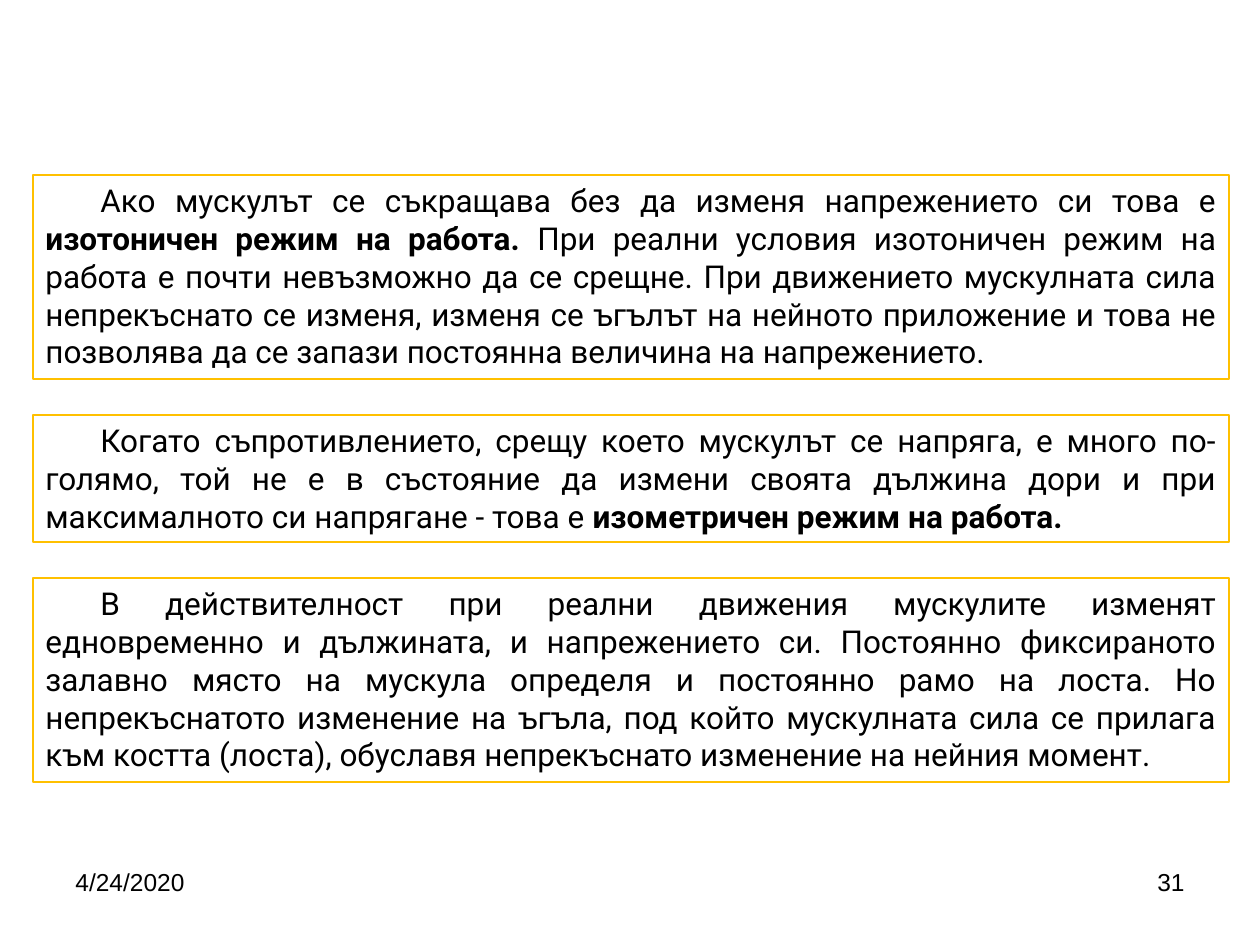
import pptx
import pptx.dml.color
import pptx.enum.shapes
import pptx.enum.text
import pptx.util

ALIGN = pptx.enum.text.PP_ALIGN
EMU_PER_PX = 914400 // 126

# Each panel: height, then its (text, bold) runs
PANELS = [
    (204, [
        ("Ако мускулът се съкращава без да изменя напрежението си това е ", False),
        ("изотоничен режим на работа. ", True),
        ("При реални условия изотоничен режим на работа е почти невъзможно да се срещне. "
         "При движението мускулната сила непрекъснато се изменя, изменя се ъгълът на "
         "нейното приложение и това не позволява да се запази постоянна величина на "
         "напрежението.", False),
    ]),
    (127, [
        ("Когато съпротивлението, срещу което мускулът се напряга, е много по-голямо, "
         "той не е в състояние да измени своята дължина дори и при максималното си "
         "напрягане - това е ", False),
        ("изометричен режим на работа.", True),
    ]),
    (204, [
        ("В действителност при реални движения мускулите изменят едновременно и "
         "дължината, и напрежението си. Постоянно фиксираното залавно място на мускула "
         "определя и постоянно рамо на лоста. Но непрекъснатото изменение на ъгъла, под "
         "който мускулната сила се прилага към костта (лоста), обуславя непрекъснато "
         "изменение на нейния момент.", False),
    ]),
]
PANEL_LEFT, PANEL_TOP, PANEL_WIDTH, PANEL_GAP = 33, 175, 1196, 36
FIRST_LINE_INDENT = 55

# Each footer: left, text, alignment
FOOTERS = [(63, "4/24/2020", ALIGN.LEFT), (903, "31", ALIGN.RIGHT)]
FOOTER_TOP, FOOTER_WIDTH, FOOTER_HEIGHT = 861, 294, 66


def px(*lengths):
    return [pptx.util.Emu(length * EMU_PER_PX) for length in lengths]


def color(hex_string):
    return pptx.dml.color.RGBColor.from_string(hex_string)


def write_paragraph(shape, runs, alignment, font_name, size):
    """Fill the shape's first paragraph with (text, bold) runs and return it."""
    frame = shape.text_frame
    frame.word_wrap = True
    frame.vertical_anchor = pptx.enum.text.MSO_ANCHOR.TOP
    paragraph = frame.paragraphs[0]
    paragraph.alignment = alignment
    for text, bold in runs:
        run = paragraph.add_run()
        run.text = text
        run.font.name = font_name
        run.font.size = pptx.util.Pt(size)
        run.font.bold = bold
        run.font.color.rgb = color("000000")
    return paragraph


def add_panel(slide, top, height, runs):
    panel = slide.shapes.add_shape(
        pptx.enum.shapes.MSO_SHAPE.RECTANGLE, *px(PANEL_LEFT, top, PANEL_WIDTH, height))
    panel.shadow.inherit = False
    panel.fill.solid()
    panel.fill.fore_color.rgb = color("FFFFFF")
    panel.line.color.rgb = color("FFC000")
    panel.line.width = pptx.util.Pt(0.75)
    paragraph = write_paragraph(panel, runs, ALIGN.JUSTIFY, "Roboto", 18)
    paragraph.space_before = pptx.util.Pt(9)
    paragraph.space_after = pptx.util.Pt(3)
    properties = paragraph._p.get_or_add_pPr()
    properties.set("marL", "0")
    properties.set("indent", str(px(FIRST_LINE_INDENT)[0]))
    panel.text_frame.auto_size = pptx.enum.text.MSO_AUTO_SIZE.SHAPE_TO_FIT_TEXT


def main():
    presentation = pptx.Presentation()
    presentation.slide_width = pptx.util.Inches(10)
    presentation.slide_height = pptx.util.Inches(7.5)
    slide = presentation.slides.add_slide(presentation.slide_layouts[6])

    for left, text, alignment in FOOTERS:
        footer = slide.shapes.add_textbox(*px(left, FOOTER_TOP, FOOTER_WIDTH, FOOTER_HEIGHT))
        write_paragraph(footer, [(text, False)], alignment, "Arial", 14)

    top = PANEL_TOP
    for height, runs in PANELS:
        add_panel(slide, top, height, runs)
        top += height + PANEL_GAP

    presentation.save("out.pptx")


if __name__ == "__main__":
    main()
